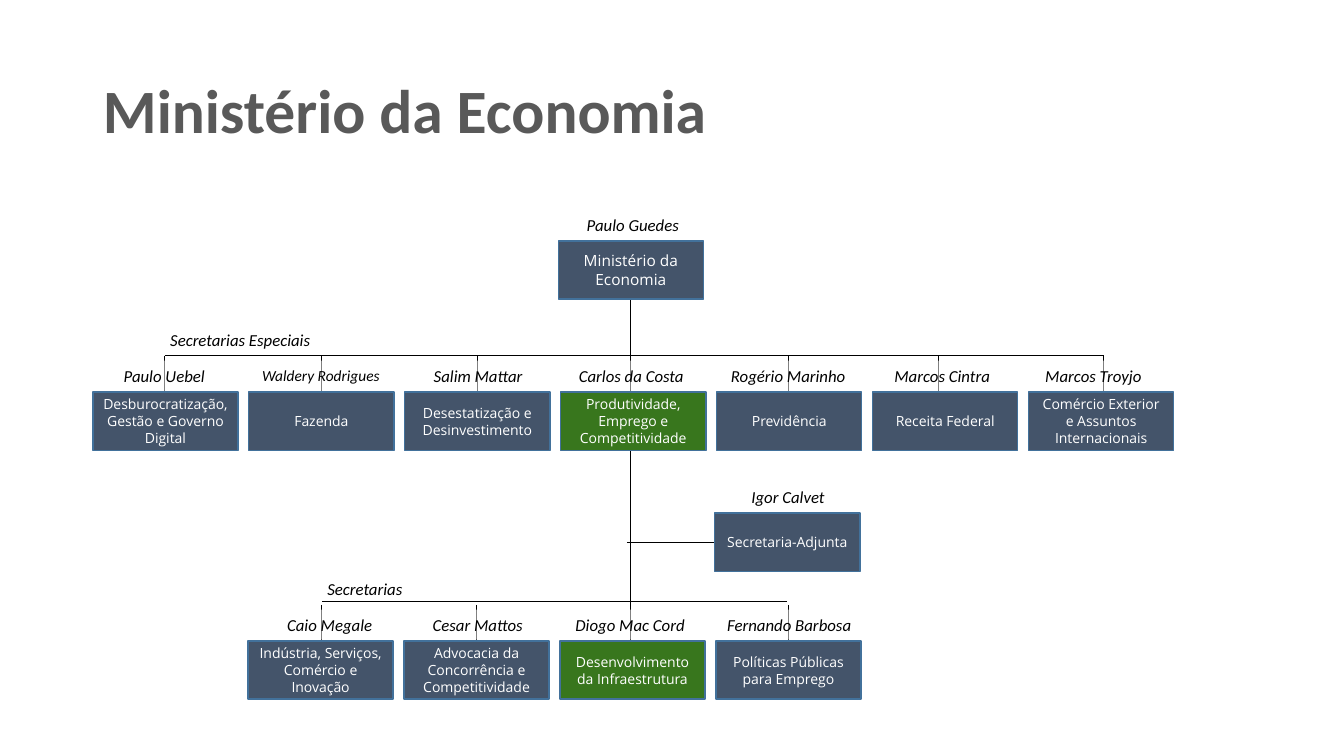
from dataclasses import dataclass

from lxml import etree
from pptx import Presentation
from pptx import util as u
from pptx.dml.color import RGBColor
from pptx.enum import shapes, text
from pptx.oxml import ns

COLORS = {
    "title": "595959",
    "unit": "44546A",
    "highlight": "38761D",
    "border": "42719B",
    "white": "FFFFFF",
    "black": "000000",
}
BOX_WIDTH, BOX_HEIGHT = 3.66, 1.47
PITCH = 3.93
LABEL_HEIGHT, LABEL_OFFSET = 0.76, 0.79
TRUNK_X = 15.9
SPECIAL_TOP, DEPARTMENT_TOP = 9.88, 16.15
SPECIAL_BAR, DEPARTMENT_BAR = 8.97, 15.16


@dataclass(frozen=True)
class Unit:
    title: str
    person: str
    label_left: float
    label_width: float
    drop_x: float | None = None
    fill: str = "unit"
    title_size: float = 10
    person_size: float = 12


@dataclass(frozen=True)
class Row:
    left: float
    top: float
    drop_top: float
    units: tuple[Unit, ...]


@dataclass(frozen=True)
class Line:
    x1: float
    y1: float
    x2: float
    y2: float


@dataclass(frozen=True)
class Heading:
    wording: str
    left: float
    top: float


ROWS = (
    Row(14.07, 6.07, 0, (
        Unit("Ministério da Economia", "Paulo Guedes", 14.17, 3.56, title_size=11),
    )),
    Row(2.34, SPECIAL_TOP, SPECIAL_BAR, (
        Unit("Desburocratização, Gestão e Governo Digital", "Paulo Uebel", 2.36, 3.56, 4.15),
        Unit("Fazenda", "Waldery Rodrigues", 6.07, 4.04, 8.1, person_size=11),
        Unit("Desestatização e Desinvestimento", "Salim Mattar", 10.21, 3.68, 12.04),
        Unit("Produtividade, Emprego e Competitividade", "Carlos da Costa", 14.07, 3.68,
             fill="highlight"),
        Unit("Previdência", "Rogério Marinho", 17.91, 3.91, 19.86),
        Unit("Receita Federal", "Marcos Cintra", 21.79, 3.91, 23.65),
        Unit("Comércio Exterior e Assuntos Internacionais", "Marcos Troyjo", 25.6, 3.91, 27.81),
    )),
    Row(18.01, 12.93, 0, (
        Unit("Secretaria-Adjunta", "Igor Calvet", 18.08, 3.56),
    )),
    Row(6.25, DEPARTMENT_TOP, 15.24, (
        Unit("Indústria, Serviços, Comércio e Inovação", "Caio Megale", 6.53, 3.56, 8.1),
        Unit("Advocacia da Concorrência e Competitividade", "Cesar Mattos", 10.16, 3.76, 12.01),
        Unit("Desenvolvimento da Infraestrutura", "Diogo Mac Cord", 14.0, 3.76,
             fill="highlight"),
        Unit("Políticas Públicas para Emprego", "Fernando Barbosa", 17.91, 3.96, 19.86),
    )),
)
LINES = (
    Line(TRUNK_X, 7.54, TRUNK_X, 17.55),
    Line(4.15, SPECIAL_BAR, 27.81, SPECIAL_BAR),
    Line(8.12, DEPARTMENT_BAR, 19.84, DEPARTMENT_BAR),
    Line(15.8, 13.67, 18.01, 13.67),
)
HEADINGS = (
    Heading("Secretarias Especiais", 4.04, 8.18),
    Heading("Secretarias", 8.0, 14.45),
)


def color(name: str) -> RGBColor:
    return RGBColor.from_string(COLORS[name])


def write(shape, wording: str, size: float, font_name: str, font_color: str,
          alignment=text.PP_ALIGN.CENTER, anchor=text.MSO_ANCHOR.TOP,
          bold: bool = False, italic: bool = False) -> None:
    frame = shape.text_frame
    frame.text = wording
    frame.word_wrap = True
    frame.auto_size = text.MSO_AUTO_SIZE.NONE
    frame.vertical_anchor = anchor
    paragraph = frame.paragraphs[0]
    paragraph.alignment = alignment
    font = paragraph.runs[0].font
    font.size = u.Pt(size)
    font.name = font_name
    font.bold = bold
    font.italic = italic
    font.color.rgb = color(font_color)


def draw_title(slide) -> None:
    title = slide.shapes.title
    title.left, title.top = u.Cm(2.34), u.Cm(1.02)
    title.width, title.height = u.Cm(29.21), u.Cm(3.68)
    write(title, "Ministério da Economia", 44, "Calibri", "title",
          text.PP_ALIGN.LEFT, text.MSO_ANCHOR.MIDDLE, bold=True)
    title.text_frame.paragraphs[0].line_spacing = 0.9


def draw_line(slide, line: Line) -> None:
    connector = slide.shapes.add_connector(
        shapes.MSO_CONNECTOR.STRAIGHT,
        u.Cm(line.x1), u.Cm(line.y1), u.Cm(line.x2), u.Cm(line.y2))
    connector.line.color.rgb = color("black")
    connector.line.width = u.Pt(0.75)
    etree.SubElement(connector._element.spPr, ns.qn("a:effectLst"))


def draw_rectangle(slide, left: float, top: float, width: float, height: float, fill: str):
    shape = slide.shapes.add_shape(
        shapes.MSO_SHAPE.RECTANGLE, u.Cm(left), u.Cm(top), u.Cm(width), u.Cm(height))
    shape.shadow.inherit = False
    shape.fill.solid()
    shape.fill.fore_color.rgb = color(fill)
    return shape


def draw_box(slide, unit: Unit, left: float, top: float) -> None:
    box = draw_rectangle(slide, left, top, BOX_WIDTH, BOX_HEIGHT, unit.fill)
    box.line.color.rgb = color("border")
    box.line.width = u.Pt(1)
    write(box, unit.title, unit.title_size, "Open Sans", "white",
          anchor=text.MSO_ANCHOR.MIDDLE)


def draw_label(slide, unit: Unit, top: float) -> None:
    label = draw_rectangle(slide, unit.label_left, top - LABEL_OFFSET,
                           unit.label_width, LABEL_HEIGHT, "white")
    label.line.fill.background()
    fill_color = label._element.spPr.find(f"{ns.qn('a:solidFill')}/{ns.qn('a:srgbClr')}")
    etree.SubElement(fill_color, ns.qn("a:alpha"), val="50000")
    write(label, unit.person, unit.person_size, "Calibri", "black", italic=True)


def draw_row(slide, row: Row) -> None:
    for unit in row.units:
        if unit.drop_x is not None:
            draw_line(slide, Line(unit.drop_x, row.drop_top,
                                  unit.drop_x, row.top + BOX_HEIGHT / 2))
    for index, unit in enumerate(row.units):
        draw_box(slide, unit, row.left + index * PITCH, row.top)
        draw_label(slide, unit, row.top)


def draw_heading(slide, heading: Heading) -> None:
    box = slide.shapes.add_textbox(
        u.Cm(heading.left), u.Cm(heading.top), u.Cm(7.98), u.Cm(LABEL_HEIGHT))
    write(box, heading.wording, 12, "Calibri", "black", text.PP_ALIGN.LEFT, italic=True)


def main() -> None:
    presentation = Presentation()
    presentation.slide_width, presentation.slide_height = u.Cm(33.87), u.Cm(19.05)
    slide = presentation.slides.add_slide(presentation.slide_layouts.get_by_name("Title Only"))
    draw_title(slide)
    for line in LINES:
        draw_line(slide, line)
    for row in ROWS:
        draw_row(slide, row)
    for heading in HEADINGS:
        draw_heading(slide, heading)
    presentation.save("out.pptx")


if __name__ == "__main__":
    main()
